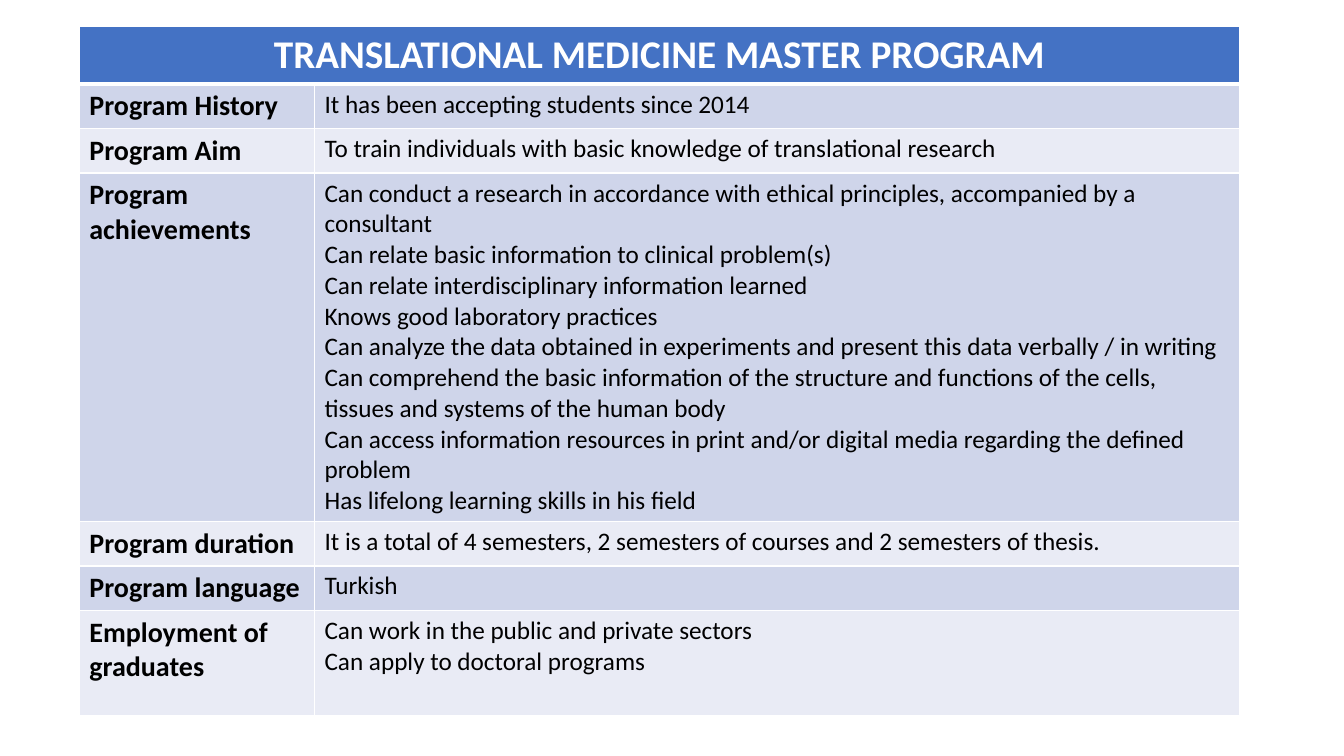
from lxml import etree
from pptx import Presentation
from pptx.dml.color import RGBColor
from pptx.enum.text import PP_ALIGN
from pptx.oxml.ns import qn
from pptx.util import Inches, Pt

CENTER = PP_ALIGN.CENTER
LEFT = PP_ALIGN.LEFT
BLACK = RGBColor(0x00, 0x00, 0x00)
WHITE = RGBColor(0xFF, 0xFF, 0xFF)
BLUE = RGBColor(0x44, 0x72, 0xC4)
BANDS = RGBColor(0xCF, 0xD5, 0xEA), RGBColor(0xE9, 0xEB, 0xF5)

# Shares of the slide, in percent
BOX = 5.9, 3.47, 86.3, 89.87
COLS = 17.5, 68.8
HEAD = 7.2
LINE = 5.47

TITLE = "TRANSLATIONAL MEDICINE MASTER PROGRAM"
FACTS = [
    ("Program History", LINE, ["It has been accepting students since 2014"]),
    ("Program Aim", LINE, ["To train individuals with basic knowledge of translational research"]),
    ("Program achievements", 35.33, [
        "Can conduct a research in accordance with ethical principles, accompanied by a consultant",
        "Can relate basic information to clinical problem(s)",
        "Can relate interdisciplinary information learned",
        "Knows good laboratory practices",
        "Can analyze the data obtained in experiments and present this data verbally / in writing",
        "Can comprehend the basic information of the structure and functions of the cells, "
        "tissues and systems of the human body",
        "Can access information resources in print and/or digital media regarding the defined problem",
        "Has lifelong learning skills in his field",
    ]),
    ("Program duration", LINE,
     ["It is a total of 4 semesters, 2 semesters of courses and 2 semesters of thesis."]),
    ("Program language", LINE, ["Turkish"]),
    ("Employment of graduates", 13.87,
     ["Can work in the public and private sectors", "Can apply to doctoral programs"]),
]


class Deck:
    font = "Calibri"

    def __init__(self):
        self.prs = Presentation()
        self.prs.slide_width = Inches(13.33)
        self.prs.slide_height = Inches(7.5)
        self.slide = self.prs.slides.add_slide(self.prs.slide_layouts[6])

    def across(self, share):
        return round(self.prs.slide_width * share / 100)

    def down(self, share):
        return round(self.prs.slide_height * share / 100)

    def table(self, box, cols, rows):
        left, top, width, height = box
        frame = self.slide.shapes.add_table(
            len(rows), len(cols), self.across(left), self.down(top),
            self.across(width), self.down(height))
        for col, share in zip(frame.table.columns, cols):
            col.width = self.across(share)
        for row, share in zip(frame.table.rows, rows):
            row.height = self.down(share)
        frame.height = self.down(height)
        return frame.table

    def cell(self, cell, lines, size, fill, color=BLACK, bold=False, align=LEFT, base=1):
        """Fill a cell with one paragraph per line; base is its lower border in points."""
        text = cell.text_frame
        for i, line in enumerate(lines):
            para = text.add_paragraph() if i else text.paragraphs[0]
            para.alignment = align
            run = para.add_run()
            run.text = line
            run.font.name = self.font
            run.font.size = Pt(size)
            run.font.bold = bold
            run.font.color.rgb = color
        self.edges(cell, base)
        cell.fill.solid()
        cell.fill.fore_color.rgb = fill

    def edges(self, cell, base):
        props = cell._tc.get_or_add_tcPr()
        for side, width in (("L", 1), ("R", 1), ("T", 1), ("B", base)):
            edge = etree.SubElement(props, qn(f"a:ln{side}"), w=str(Pt(width)))
            fill = etree.SubElement(edge, qn("a:solidFill"))
            etree.SubElement(fill, qn("a:srgbClr"), val=str(WHITE))


def main():
    deck = Deck()
    grid = deck.table(BOX, COLS, [HEAD] + [share for _, share, _ in FACTS])
    head = grid.cell(0, 0)
    head.merge(grid.cell(0, 1))
    deck.cell(head, [TITLE], 28, BLUE, WHITE, bold=True, align=CENTER, base=3)
    deck.edges(grid.cell(0, 1), 3)
    for i, (label, _, lines) in enumerate(FACTS):
        band = BANDS[i % 2]
        deck.cell(grid.cell(i + 1, 0), [label], 20, band, bold=True)
        deck.cell(grid.cell(i + 1, 1), lines, 18, band)
    deck.prs.save("out.pptx")


if __name__ == "__main__":
    main()
